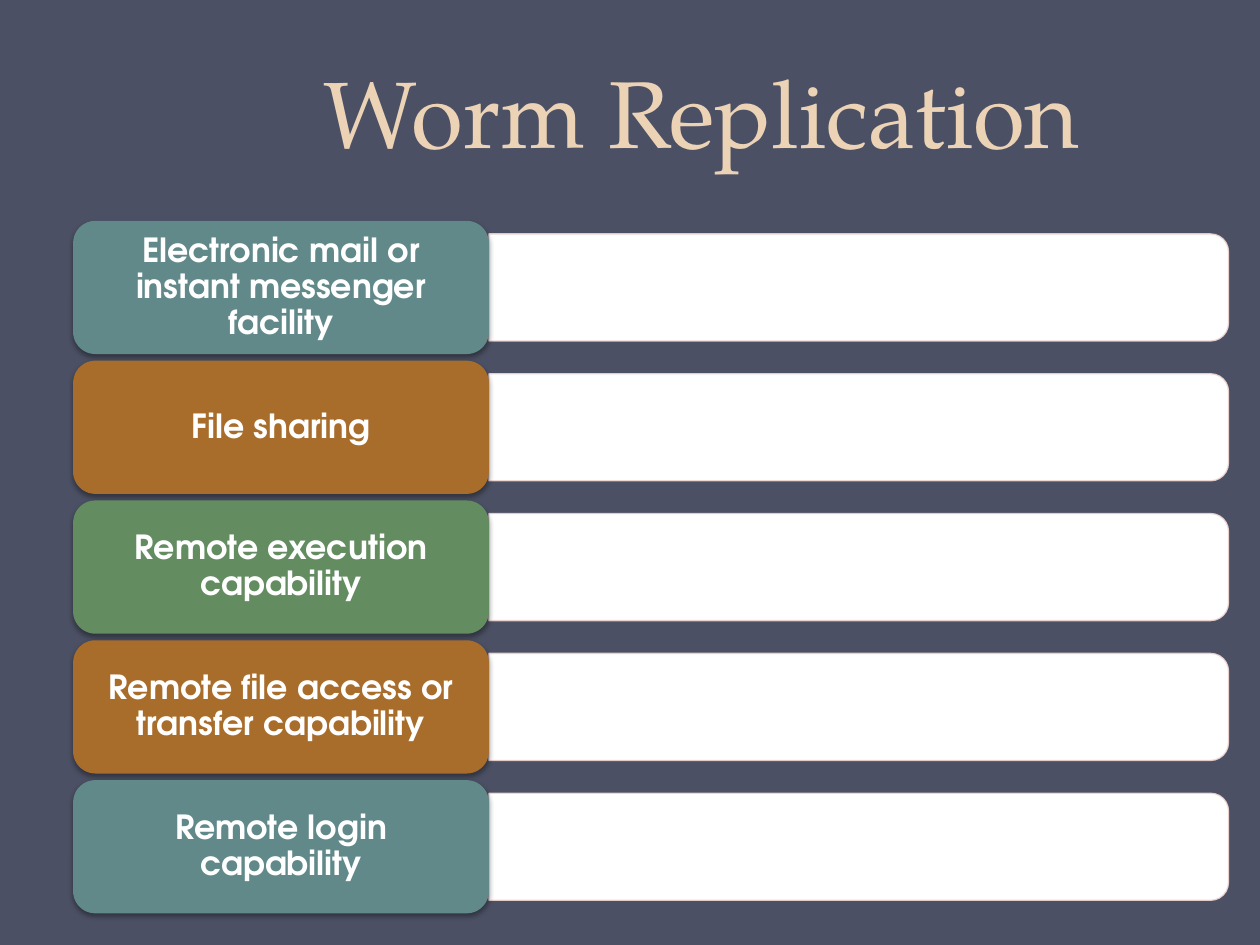
from lxml import etree
from pptx import Presentation
from pptx.dml.color import RGBColor
from pptx.enum.shapes import MSO_SHAPE as Shape
from pptx.enum.text import MSO_ANCHOR as Anchor, PP_ALIGN as Align
from pptx.oxml.ns import qn
from pptx.util import Pt

SLATE = RGBColor(0x4B, 0x50, 0x64)
SAND = RGBColor(0xED, 0xD3, 0xB6)
BLUSH = RGBColor(0xEE, 0xD3, 0xD0)
WHITE = RGBColor(0xFF, 0xFF, 0xFF)
TEAL = RGBColor(0x61, 0x89, 0x8A)
OCHRE = RGBColor(0xA9, 0x6D, 0x2B)
GREEN = RGBColor(0x64, 0x8C, 0x61)

TITLE_FONT = dict(name="TeX Gyre Pagella", size=Pt(54))
CARD_FONT = dict(name="TeX Gyre Adventor", size=Pt(19), bold=True)
TITLE_FRAME = dict(word_wrap=True, vertical_anchor=Anchor.BOTTOM)
CARD_FRAME = dict(word_wrap=True, vertical_anchor=Anchor.MIDDLE,
                  margin_left=Pt(5.8), margin_right=Pt(5.8),
                  margin_top=Pt(2.9), margin_bottom=Pt(2.9))

METHODS = [
    ("Electronic mail or instant messenger facility", TEAL),
    ("File sharing", OCHRE),
    ("Remote execution capability", GREEN),
    ("Remote file access or transfer capability", OCHRE),
    ("Remote login capability", TEAL),
]
CARD_LEFT, CARD_TOP, CARD_WIDTH, CARD_HEIGHT = 41.8, 126.2, 237.6, 76.1
BAR_LENGTH, BAR_THICKNESS = 422.6, 61.2
ROW_PITCH = 79.9


def apply_format(target, values):
    for name, value in values.items():
        setattr(target, name, value)


class SlideBuilder:
    def __init__(self, presentation, background):
        self.slide = presentation.slides.add_slide(presentation.slide_layouts[6])
        fill = self.slide.background.fill
        fill.solid()
        fill.fore_color.rgb = background

    def add_text(self, shape, text, frame, font, color, spacing):
        apply_format(shape.text_frame, frame)
        paragraph = shape.text_frame.paragraphs[0]
        apply_format(paragraph, dict(alignment=Align.CENTER, line_spacing=spacing))
        run = paragraph.add_run()
        run.text = text
        apply_format(run.font, font)
        run.font.color.rgb = color

    def filled_shape(self, kind, left, top, width, height, color):
        shape = self.slide.shapes.add_shape(
            kind, Pt(left), Pt(top), Pt(width), Pt(height))
        shape.shadow.inherit = False
        shape.fill.solid()
        shape.fill.fore_color.rgb = color
        return shape

    def title(self, text, left, top, width, height):
        box = self.slide.shapes.add_textbox(
            Pt(left), Pt(top), Pt(width), Pt(height))
        self.add_text(box, text, TITLE_FRAME, TITLE_FONT, SAND, Pt(58))

    def bar(self, left, middle):
        """Add a bar lying on its side, with its rounded end to the right."""
        shape = self.filled_shape(
            Shape.ROUND_2_SAME_RECTANGLE,
            left + (BAR_LENGTH - BAR_THICKNESS) / 2, middle - BAR_LENGTH / 2,
            BAR_THICKNESS, BAR_LENGTH, WHITE)
        shape.rotation = 90
        shape.line.color.rgb = BLUSH
        shape.line.width = Pt(0.75)
        outline = shape._element.spPr.find(qn("a:ln"))
        color = outline.find(".//" + qn("a:srgbClr"))
        etree.SubElement(color, qn("a:alpha"), val="90000")

    def card(self, text, top, color):
        shape = self.filled_shape(Shape.ROUNDED_RECTANGLE, CARD_LEFT, top,
                                  CARD_WIDTH, CARD_HEIGHT, color)
        shape.line.fill.background()
        self.soft_shadow(shape)
        self.add_text(shape, text, CARD_FRAME, CARD_FONT, WHITE, 0.9)

    def soft_shadow(self, shape):
        effects = shape._element.spPr.find(qn("a:effectLst"))
        shadow = etree.SubElement(
            effects, qn("a:outerShdw"), blurRad=str(int(Pt(3.1))),
            dist=str(int(Pt(1.8))), dir="5400000", rotWithShape="0")
        color = etree.SubElement(shadow, qn("a:srgbClr"), val="000000")
        etree.SubElement(color, qn("a:alpha"), val="35000")


def main():
    presentation = Presentation()
    presentation.slide_width, presentation.slide_height = Pt(720), Pt(540)
    builder = SlideBuilder(presentation, SLATE)
    builder.title("Worm Replication", 82, 9.4, 638, 90)
    for row, (text, color) in enumerate(METHODS):
        top = CARD_TOP + row * ROW_PITCH
        builder.bar(CARD_LEFT + CARD_WIDTH, top + CARD_HEIGHT / 2)
        builder.card(text, top, color)
    presentation.save("out.pptx")


if __name__ == "__main__":
    main()
